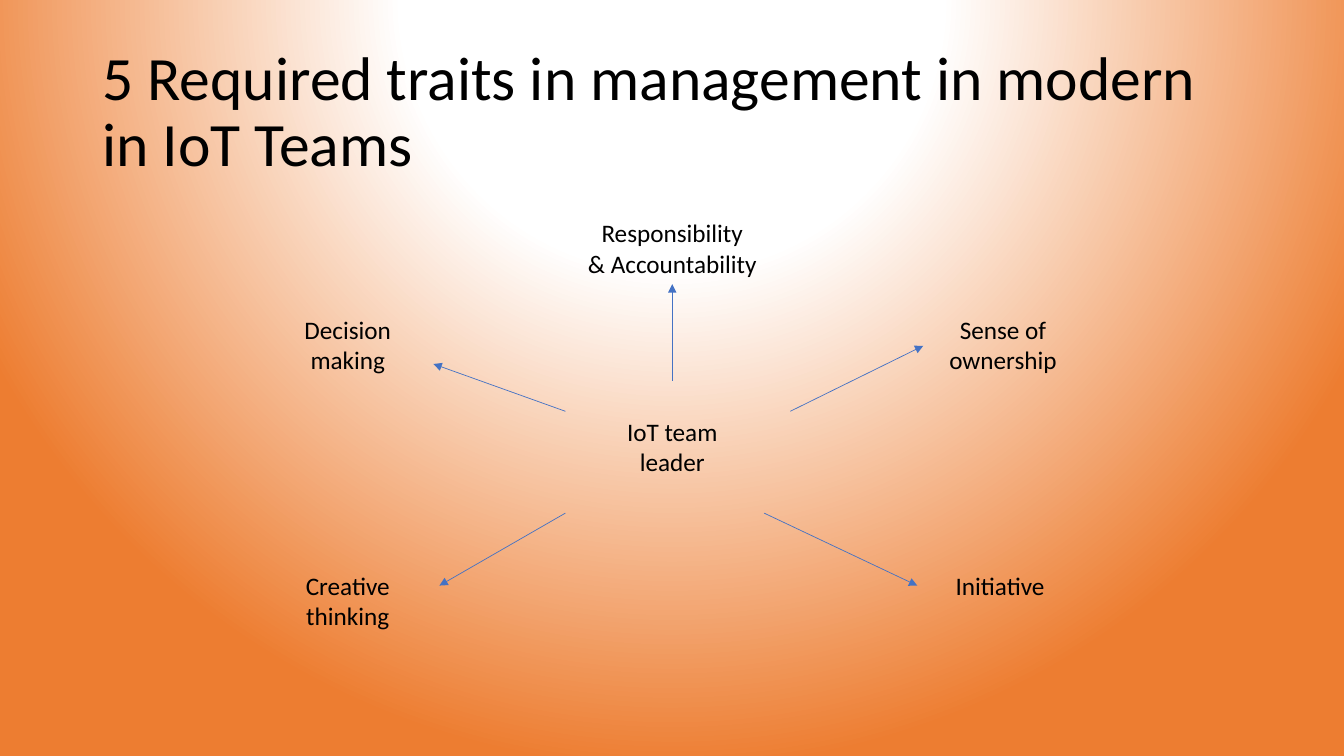
import pptx
import pptx.dml.color
import pptx.enum.shapes
import pptx.enum.text
import pptx.oxml
import pptx.oxml.ns
import pptx.util
from lxml import etree

Pt = pptx.util.Pt
qn = pptx.oxml.ns.qn

COLORS = {"text": "000000", "arrow": "4472C4", "center": "FFFFFF", "edge": "ED7D31"}
FONT = "Calibri"
LEFT_X, MIDDLE_X, RIGHT_X = 248.4, 480.2, 716.4
UPPER_Y, LOWER_Y = 221, 404
LABEL_WIDTH = 113.8

# Text, horizontal centre, top, width, height
LABELS = [
    ("IoT team leader", MIDDLE_X, 293.8, LABEL_WIDTH, 51),
    ("Responsibility\n& Accountability", MIDDLE_X, 152, 169.2, 51),
    ("Sense of ownership", RIGHT_X, UPPER_Y, LABEL_WIDTH, 51),
    ("Initiative ", RIGHT_X, LOWER_Y, LABEL_WIDTH, 29),
    ("Decision making", LEFT_X, UPPER_Y, LABEL_WIDTH, 51),
    ("Creative thinking", LEFT_X, LOWER_Y, LABEL_WIDTH, 51),
]

# Start near the leader, end near the trait
ARROWS = [
    ((MIDDLE_X, 272), (MIDDLE_X, 203)),
    ((564.5, 293.8), (659.5, 247)),
    ((545.8, 366.5), (655.2, 418.3)),
    ((403.9, 366.5), (313.9, 418.3)),
    ((403.9, 293.8), (309.6, 260)),
]


def rgb(name):
    return pptx.dml.color.RGBColor.from_string(COLORS[name])


def set_font(paragraph, size):
    paragraph.font.name = FONT
    paragraph.font.size = Pt(size)
    paragraph.font.color.rgb = rgb("text")


def set_background(slide):
    """Fill the slide with a circular gradient centred above its top edge."""
    slide.background.fill.gradient()
    gradient = slide.element.find(".//" + qn("a:gradFill"))
    stops = "".join(
        f'<a:gs pos="{position}"><a:srgbClr val="{COLORS[name]}"/></a:gs>'
        for position, name in ((0, "center"), (35000, "center"), (100000, "edge"))
    )
    circular = pptx.oxml.parse_xml(
        f'<a:gradFill {pptx.oxml.ns.nsdecls("a")} rotWithShape="1">'
        f"<a:gsLst>{stops}</a:gsLst>"
        '<a:path path="circle">'
        '<a:fillToRect l="50000" t="-80000" r="50000" b="180000"/>'
        "</a:path></a:gradFill>"
    )
    gradient.getparent().replace(gradient, circular)


def set_title(slide, text):
    title = slide.shapes.title
    title.left, title.top, title.width, title.height = Pt(66), Pt(28.8), Pt(828), Pt(104.4)
    frame = title.text_frame
    frame.text = text
    frame.auto_size = pptx.enum.text.MSO_AUTO_SIZE.NONE
    frame.vertical_anchor = pptx.enum.text.MSO_ANCHOR.MIDDLE
    paragraph = frame.paragraphs[0]
    paragraph.alignment = pptx.enum.text.PP_ALIGN.LEFT
    paragraph.line_spacing = 0.9
    set_font(paragraph, 44)


def add_label(slide, text, center_x, top, width, height):
    shape = slide.shapes.add_textbox(Pt(center_x - width / 2), Pt(top), Pt(width), Pt(height))
    frame = shape.text_frame
    frame.word_wrap = True
    frame.auto_size = pptx.enum.text.MSO_AUTO_SIZE.SHAPE_TO_FIT_TEXT
    frame.text = text
    for paragraph in frame.paragraphs:
        paragraph.alignment = pptx.enum.text.PP_ALIGN.CENTER
        set_font(paragraph, 18)


def add_arrow(slide, start, end):
    points = [Pt(value) for value in (*start, *end)]
    arrow = slide.shapes.add_connector(pptx.enum.shapes.MSO_CONNECTOR.STRAIGHT, *points)
    arrow.line.color.rgb = rgb("arrow")
    arrow.line.width = Pt(0.5)
    properties = arrow.element.spPr
    etree.SubElement(properties.find(qn("a:ln")), qn("a:tailEnd"), type="triangle")
    etree.SubElement(properties, qn("a:effectLst"))


def main():
    presentation = pptx.Presentation()
    presentation.slide_width, presentation.slide_height = Pt(960), Pt(540)
    slide = presentation.slides.add_slide(presentation.slide_layouts.get_by_name("Title Only"))
    set_background(slide)
    set_title(slide, "5 Required traits in management in modern in IoT Teams")
    for label in LABELS:
        add_label(slide, *label)
    for start, end in ARROWS:
        add_arrow(slide, start, end)
    presentation.save("out.pptx")


if __name__ == "__main__":
    main()
